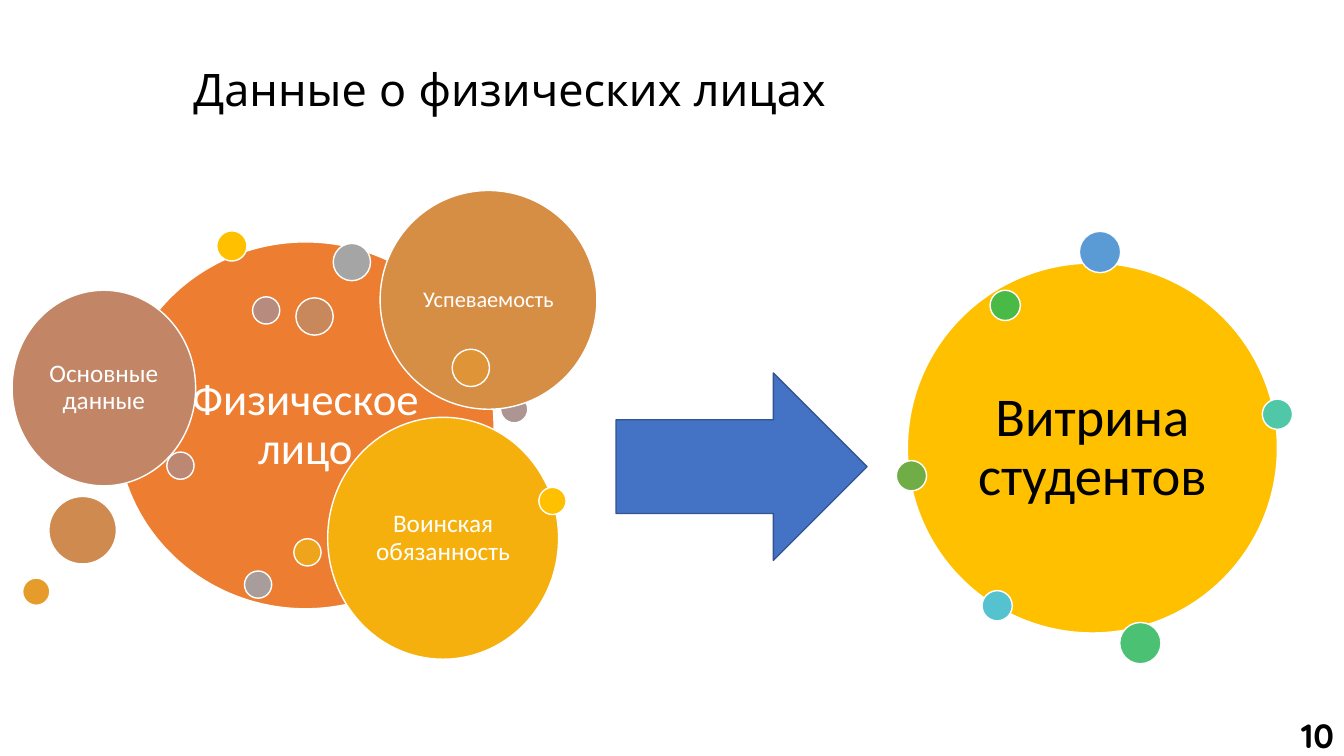
import pptx
import pptx.util
import pptx.dml.color
import pptx.enum.shapes
import pptx.enum.text

# Content: positions are columns and rows of a grid with one-inch cells
COLS, ROWS = 13.33, 7.5
TITLE = "Данные о физических лицах"
PAGE = "10"
SMALL, SHOP, MEDIUM, LARGE = 0.27, 0.3, 0.37, 0.41
BIG_DOT = 0.67

# Dots: centre column, centre row, diameter, colour.
# Labelled circles: left, top, width, height, colour, label, size, text colour, inset.
PERSON = [
    (1.16, 2.4, 3.74, 3.64, "ED7D31", "Физическое лицо", 32, "FFFFFF", 0.13),
    (3.49, 2.6, MEDIUM, "A5A5A5"),
    (2.56, 5.8, SMALL, "A99D9C"),
    (5.1, 4.06, SMALL, "AD9592"),
    (2.64, 3.08, SMALL, "B78B7E"),
    (1.79, 4.62, SMALL, "BD8873"),
    (0.12, 2.88, 1.82, 1.94, "C28667", "Основные данные", 18, "FFFFFF", 0.07),
    (3.12, 3.14, MEDIUM, "C9885C"),
    (0.82, 5.26, BIG_DOT, "CF8A50"),
    (3.77, 1.89, 2.15, 2.17, "D68D44", "Успеваемость", 16, "FFFFFF", 0.07),
    (4.67, 3.65, MEDIUM, "DE9437"),
    (0.36, 5.87, SMALL, "E59C2A"),
    (3.05, 5.48, SMALL, "EEA51C"),
    (3.25, 4.14, 2.29, 2.4, "F6B00E", "Воинская обязанность", 18, "FFFFFF", 0.07),
    (5.48, 4.97, SMALL, "FFC000"),
    (2.3, 2.44, SHOP, "FFC000"),
]
STUDENTS = [
    (9, 2.61, 3.67, 3.67, "FFC000", "Витрина студентов", 39, "000000", 0.16),
    (10.91, 2.5, LARGE, "5B9BD5"),
    (9.89, 6.01, SHOP, "55C3CF"),
    (12.67, 4.11, SHOP, "50C8A7"),
    (11.31, 6.38, LARGE, "4BC174"),
    (9.97, 3.03, SHOP, "4ABA46"),
    (9.04, 4.72, SHOP, "70AD47"),
]

SHAPE = pptx.enum.shapes.MSO_SHAPE
ALIGN = pptx.enum.text.PP_ALIGN
ANCHOR = pptx.enum.text.MSO_ANCHOR

prs = pptx.Presentation()
prs.slide_width = pptx.util.Inches(COLS)
prs.slide_height = pptx.util.Inches(ROWS)
s = prs.slides.add_slide(prs.slide_layouts[6])


def color(value):
    return pptx.dml.color.RGBColor.from_string(value)


def grid(*cells):
    return [pptx.util.Inches(c) for c in cells]


def write(sp, text, size, font="Calibri", fill="000000", bold=False,
          align=ALIGN.LEFT, anchor=ANCHOR.MIDDLE, spacing=0.9, inset=None):
    tf = sp.text_frame
    tf.word_wrap = True
    tf.vertical_anchor = anchor
    if inset is not None:
        tf.margin_left = tf.margin_right = pptx.util.Inches(inset)
        tf.margin_top = tf.margin_bottom = pptx.util.Inches(inset)
    p = tf.paragraphs[0]
    p.alignment = align
    p.line_spacing = spacing
    r = p.add_run()
    r.text = text
    r.font.name = font
    r.font.size = pptx.util.Pt(size)
    r.font.bold = bold
    r.font.color.rgb = color(fill)


def draw(kind, box, fill, line="FFFFFF"):
    sp = s.shapes.add_shape(kind, *grid(*box))
    sp.shadow.inherit = False
    sp.fill.solid()
    sp.fill.fore_color.rgb = color(fill)
    sp.line.color.rgb = color(line)
    sp.line.width = pptx.util.Pt(1)
    return sp


def draw_bubbles(bubbles):
    for bubble in bubbles:
        if len(bubble) == 4:
            x, y, d, fill = bubble
            draw(SHAPE.OVAL, (x - d / 2, y - d / 2, d, d), fill)
        else:
            *box, fill, label, size, ink, inset = bubble
            sp = draw(SHAPE.OVAL, box, fill)
            write(sp, label, size, fill=ink, align=ALIGN.CENTER, inset=inset)


# Title
write(s.shapes.add_textbox(*grid(1.82, 0.19, 10.55, 1.45)), TITLE, 32,
      font="Quicksand")

# Personal data, arrow, student data mart
draw_bubbles(PERSON)
draw(SHAPE.RIGHT_ARROW, (6.11, 3.7, 2.49, 1.86), "4472C4", line="325491")
draw_bubbles(STUDENTS)

# Page number
write(s.shapes.add_textbox(*grid(12.28, 7.04, 1.05, 0.51)), PAGE, 24,
      font="Quicksand", bold=True, align=ALIGN.RIGHT, anchor=ANCHOR.TOP,
      spacing=1.0)

prs.save("out.pptx")
